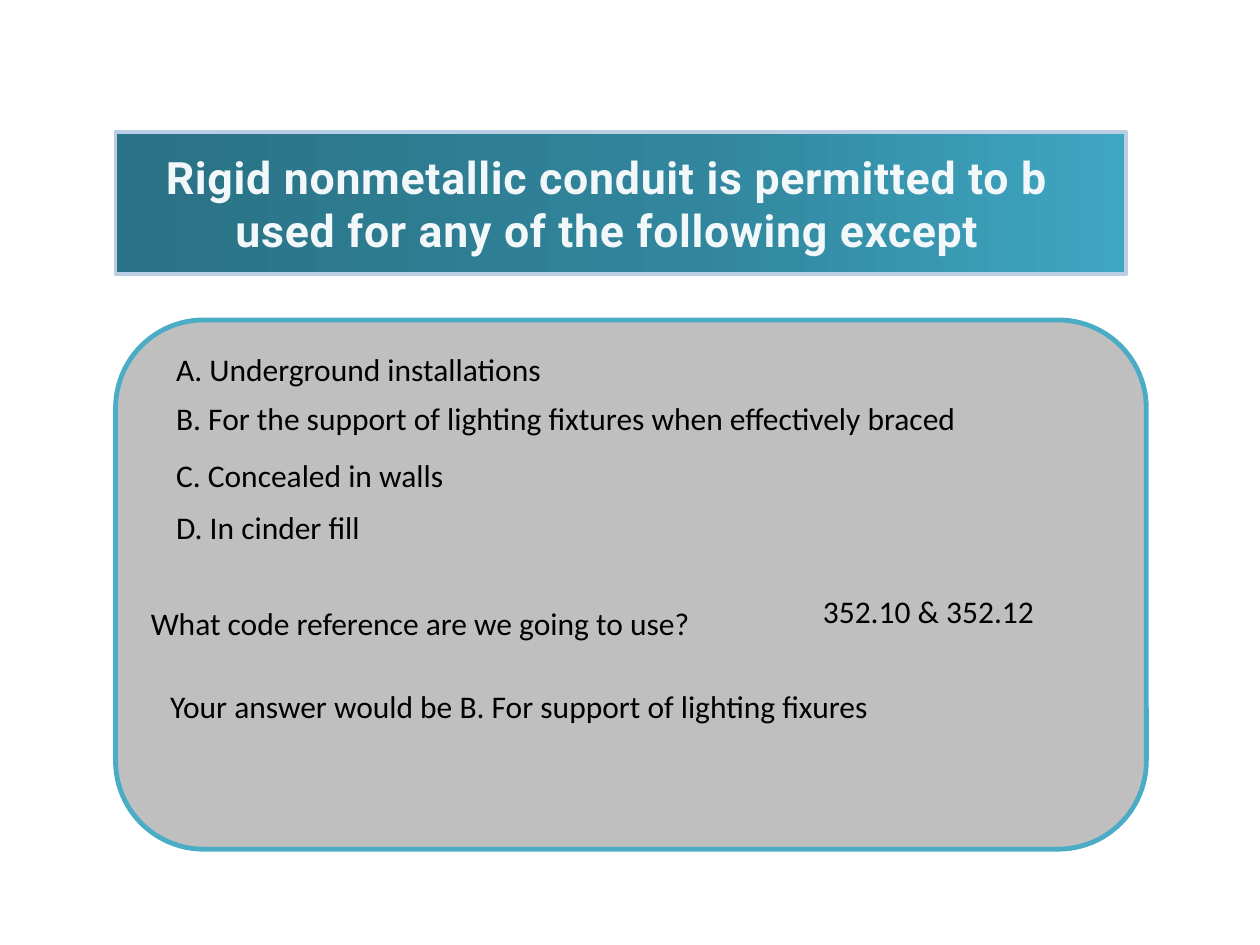
from lxml.etree import SubElement as Sub
from pptx import Presentation
from pptx.dml.color import RGBColor as RGB
from pptx.enum.shapes import MSO_SHAPE as Geo
from pptx.enum.text import MSO_ANCHOR as Anchor, MSO_AUTO_SIZE as Auto, PP_ALIGN as Align
from pptx.oxml.ns import qn
from pptx.util import Cm, Pt

HUES = {
    "panel": "BFBFBF", "edge": "4BACC6", "rim": "B9CDE5",
    "text": "000000", "title": "F2F7F9",
    "teal1": "2A7285", "teal2": "31859C", "teal3": "3FA6C2",
}
TITLE = "Rigid nonmetallic conduit is permitted to b used for any of the following except"
LINES = [
    ("A. Underground installations", 3.3, 6.93, 14.45),
    ("B. For the support of lighting fixtures when effectively braced", 3.3, 7.92, 19),
    ("C. Concealed in walls", 3.3, 9.07, 13.8),
    ("D. In cinder fill", 3.3, 10.11, 14.45),
    ("What code reference are we going to use?", 2.79, 12.05, 13.92),
    ("352.10 & 352.12", 16.34, 11.81, 6.96),
    ("Your answer would be B. For support of lighting fixures", 3.18, 13.72, 19.13),
]


def hue(name):
    return RGB.from_string(HUES[name])


def add_box(shapes, geo, x, y, w, h, edge, width):
    box = shapes.add_shape(geo, Cm(x), Cm(y), Cm(w), Cm(h))
    box.shadow.inherit = False
    box.line.color.rgb = hue(edge)
    box.line.width = Pt(width)
    return box


def fade(box, stops):
    box.fill.gradient()
    box.fill.gradient_angle = 0
    group = box.element.spPr.find(qn("a:gradFill")).find(qn("a:gsLst"))
    for old in list(group):
        group.remove(old)
    for place, name in stops:
        stop = Sub(group, qn("a:gs"), pos=str(place * 1000))
        Sub(stop, qn("a:srgbClr"), val=HUES[name])


def style(run, face, size, name):
    run.font.name = face
    run.font.size = Pt(size)
    run.font.color.rgb = hue(name)


def add_panel(shapes):
    panel = add_box(shapes, Geo.ROUNDED_RECTANGLE, 2.33, 6.45, 20.78, 10.67, "edge", 2.75)
    panel.fill.solid()
    panel.fill.fore_color.rgb = hue("panel")


def add_title(shapes):
    bar = add_box(shapes, Geo.RECTANGLE, 2.33, 2.66, 20.37, 2.87, "rim", 2.25)
    fade(bar, [(1, "teal1"), (57, "teal2"), (100, "teal3")])
    frame = bar.text_frame
    frame.text = TITLE
    frame.word_wrap = True
    frame.vertical_anchor = Anchor.MIDDLE
    frame.margin_right = Cm(0.8)
    para = frame.paragraphs[0]
    para.alignment = Align.CENTER
    run = para.runs[0]
    style(run, "Roboto", 25.5, "title")
    run.font.bold = True
    run.font._element.set("spc", "40")


def add_line(shapes, text, x, y, w):
    frame = shapes.add_textbox(Cm(x), Cm(y), Cm(w), Cm(1.03)).text_frame
    frame.text = text
    frame.word_wrap = True
    frame.auto_size = Auto.SHAPE_TO_FIT_TEXT
    style(frame.paragraphs[0].runs[0], "Calibri", 18, "text")


def main():
    deck = Presentation()
    deck.slide_width, deck.slide_height = Cm(25.4), Cm(19.05)
    shapes = deck.slides.add_slide(deck.slide_layouts[6]).shapes
    add_panel(shapes)
    add_title(shapes)
    for line in LINES:
        add_line(shapes, *line)
    deck.save("out.pptx")


if __name__ == "__main__":
    main()
